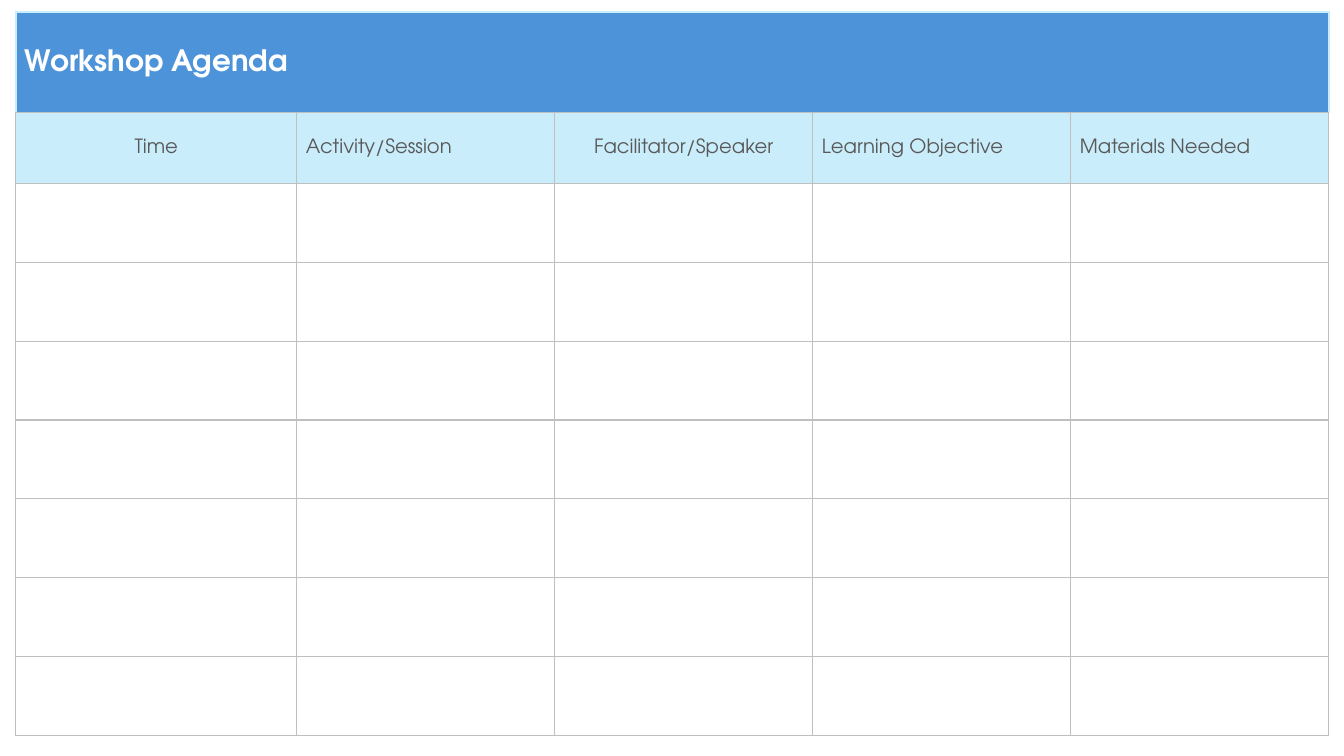
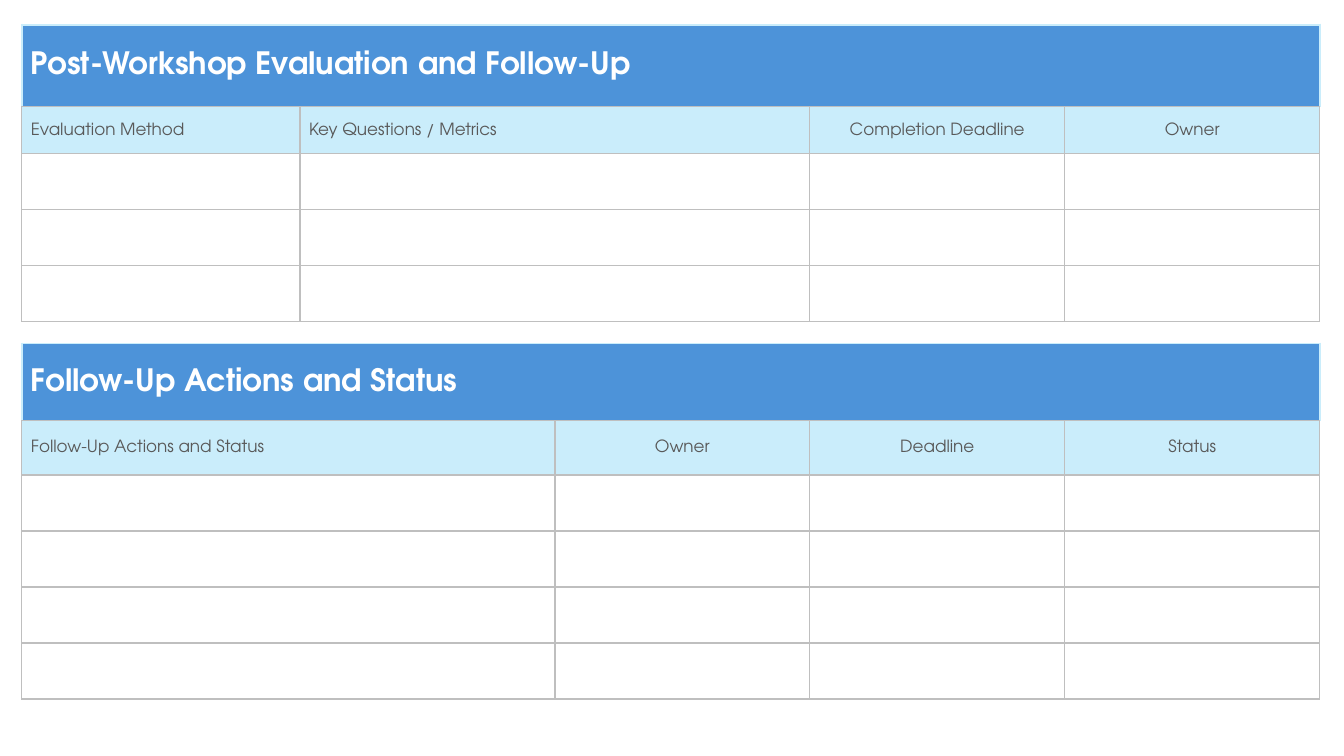
from lxml import etree
from pptx import Presentation
from pptx.dml.color import RGBColor
from pptx.enum import text
from pptx.oxml import ns
from pptx.util import Pt

COLORS = {
    "band": "4D93D9",
    "header": "CAEDFB",
    "grid": "BFBFBF",
    "title": "FFFFFF",
    "label": "595959",
}
FONT = "TeX Gyre Adventor"
LEFT, CENTER = text.PP_ALIGN.LEFT, text.PP_ALIGN.CENTER
GRID = ("grid", 1)
EDGE = ("header", 1.5)


def style_cell(cell, borders, fill=None):
    """Set the borders, given as (color, width) for left, right, top, bottom, and the fill."""
    properties = cell._tc.get_or_add_tcPr()
    for side, (color, width) in zip("LRTB", borders):
        line = etree.SubElement(properties, ns.qn(f"a:ln{side}"), w=str(int(Pt(width))))
        solid = etree.SubElement(line, ns.qn("a:solidFill"))
        etree.SubElement(solid, ns.qn("a:srgbClr"), val=COLORS[color])
    if fill:
        cell.fill.solid()
        cell.fill.fore_color.rgb = RGBColor.from_string(COLORS[fill])
    else:
        cell.fill.background()


def write_cell(cell, words, size, color, align=LEFT, bold=False):
    cell.vertical_anchor = text.MSO_ANCHOR.MIDDLE
    cell.margin_left = Pt(6.5 if align == LEFT else 0.7)
    cell.margin_right = cell.margin_top = Pt(0.7)
    cell.margin_bottom = 0
    paragraph = cell.text_frame.paragraphs[0]
    paragraph.alignment = align
    run = paragraph.add_run()
    run.text = words
    run.font.name = FONT
    run.font.size = Pt(size)
    run.font.bold = bold
    run.font.color.rgb = RGBColor.from_string(COLORS[color])


# Each slide is a list of tables; heights are title, header, then the blank rows.
slides = [
    [
        {
            "title": "Workshop Agenda",
            "at": (11.3, 8.7),
            "sizes": (21, 14),
            "widths": [200.7] + [184.3] * 4,
            "heights": [71.8, 50.6] + [56.3] * 7,
            "headers": [
                ("Time", CENTER),
                ("Activity/Session", LEFT),
                ("Facilitator/Speaker", CENTER),
                ("Learning Objective", LEFT),
                ("Materials Needed", LEFT),
            ],
        },
    ],
    [
        {
            "title": "Post-Workshop Evaluation and Follow-Up",
            "at": (15.6, 17.6),
            "sizes": (22, 12),
            "widths": [198.7, 364.2, 182.1, 182.1],
            "heights": [58.5, 33.6] + [40] * 3,
            "headers": [
                ("Evaluation Method", LEFT),
                ("Key Questions / Metrics", LEFT),
                ("Completion Deadline", CENTER),
                ("Owner", CENTER),
            ],
        },
        {
            "title": "Follow-Up Actions and Status",
            "at": (15.6, 245.3),
            "sizes": (22, 12),
            "widths": [380.8] + [182.1] * 3,
            "heights": [55.2, 38.8] + [40] * 4,
            "headers": [
                ("Follow-Up Actions and Status", LEFT),
                ("Owner", CENTER),
                ("Deadline", CENTER),
                ("Status", CENTER),
            ],
        },
    ],
]

presentation = Presentation()
presentation.slide_width = Pt(960)
presentation.slide_height = Pt(540)

for tables in slides:
    slide = presentation.slides.add_slide(presentation.slide_layouts[6])
    for layout in tables:
        widths, heights = layout["widths"], layout["heights"]
        left, top = layout["at"]
        title_size, header_size = layout["sizes"]
        table = slide.shapes.add_table(
            len(heights), len(widths),
            Pt(left), Pt(top), Pt(sum(widths)), Pt(sum(heights)),
        ).table
        table.first_row = table.horz_banding = False
        for column, width in zip(table.columns, widths):
            column.width = Pt(width)
        for row, height in zip(table.rows, heights):
            row.height = Pt(height)

        title_cell = table.cell(0, 0)
        title_cell.merge(table.cell(0, len(widths) - 1))
        write_cell(title_cell, layout["title"], title_size, "title", bold=True)
        for cell in table.rows[0].cells:
            style_cell(cell, [EDGE, EDGE, EDGE, GRID], "band")

        for cell, (words, align) in zip(table.rows[1].cells, layout["headers"]):
            write_cell(cell, words, header_size, "label", align)
            style_cell(cell, [GRID] * 4, "header")

        for row in list(table.rows)[2:]:
            for cell in row.cells:
                style_cell(cell, [GRID] * 4)

presentation.save("out.pptx")
